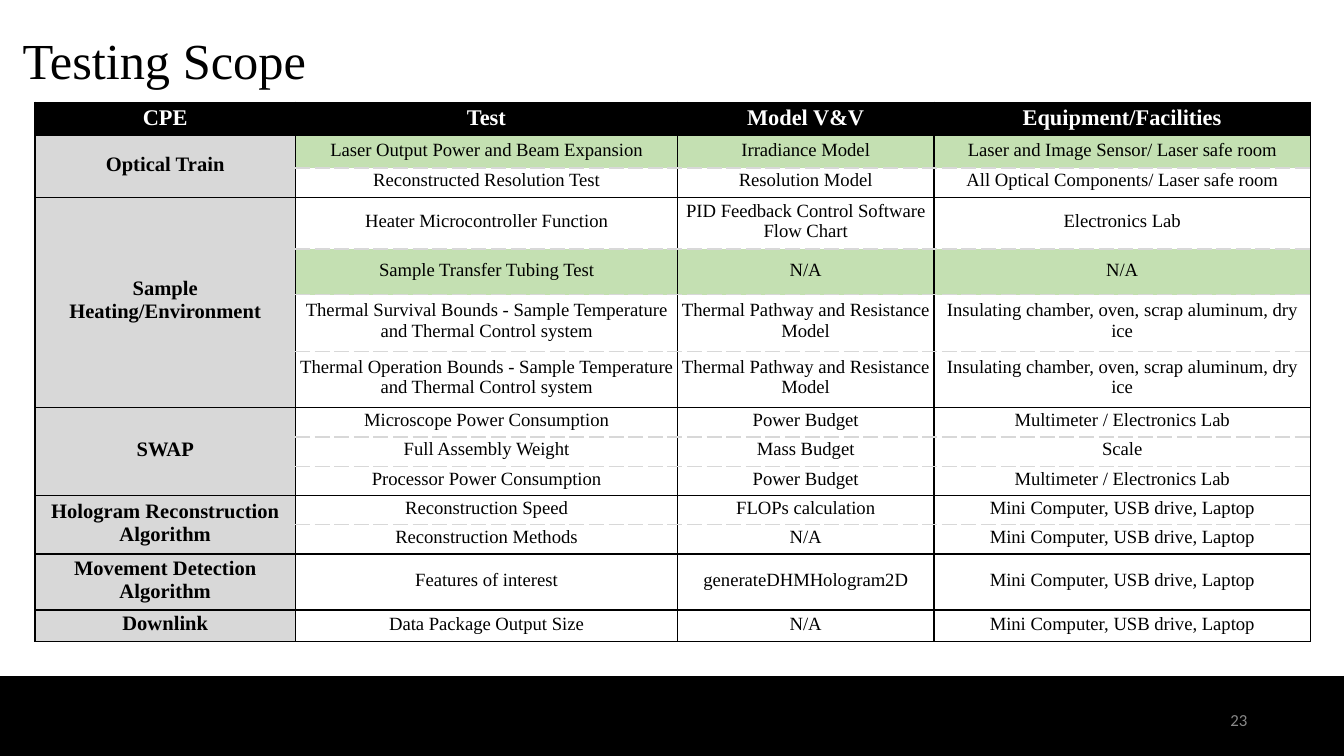
"""Build the Testing Scope slide with its table of tests by project element."""
import pptx
import pptx.dml.color
import pptx.enum.shapes
import pptx.enum.text
import pptx.oxml
import pptx.oxml.ns
import pptx.util

Inches, Pt = pptx.util.Inches, pptx.util.Pt
Align, Anchor = pptx.enum.text.PP_ALIGN, pptx.enum.text.MSO_ANCHOR

THEME = {
    "serif": "Times New Roman", "sans": "Calibri",
    "black": "000000", "white": "FFFFFF", "grey": "888888",
    "group": "D8D8D8", "done": "C4E0B2", "dash": "D8D8D8",
    "title": 27, "head": 12, "label": 11, "body": 10, "page": 9, "rule": 0.75,
}

HEADS = ("CPE", "Test", "Model V&V", "Equipment/Facilities")
BOARD = "Mini Computer, USB drive, Laptop"
METER = "Multimeter / Electronics Lab"
OVEN = "Insulating chamber, oven, scrap aluminum, dry ice"
PATHWAY = "Thermal Pathway and Resistance Model"
GROUPS = [
    ("Optical Train", [
        ("Laser Output Power and Beam Expansion", "Irradiance Model",
         "Laser and Image Sensor/ Laser safe room"),
        ("Reconstructed Resolution Test", "Resolution Model",
         "All Optical Components/ Laser safe room")]),
    ("Sample Heating/Environment", [
        ("Heater Microcontroller Function",
         "PID Feedback Control Software Flow Chart", "Electronics Lab"),
        ("Sample Transfer Tubing Test", "N/A", "N/A"),
        ("Thermal Survival Bounds - Sample Temperature and Thermal Control system",
         PATHWAY, OVEN),
        ("Thermal Operation Bounds - Sample Temperature and Thermal Control system",
         PATHWAY, OVEN)]),
    ("SWAP", [
        ("Microscope Power Consumption", "Power Budget", METER),
        ("Full Assembly Weight", "Mass Budget", "Scale"),
        ("Processor Power Consumption", "Power Budget", METER)]),
    ("Hologram Reconstruction Algorithm", [
        ("Reconstruction Speed", "FLOPs calculation", BOARD),
        ("Reconstruction Methods", "N/A", BOARD)]),
    ("Movement Detection Algorithm", [
        ("Features of interest", "generateDHMHologram2D", BOARD)]),
    ("Downlink", [("Data Package Output Size", "N/A", BOARD)]),
]
DONE = {"Laser Output Power and Beam Expansion", "Sample Transfer Tubing Test"}
WIDTHS = (1.94, 2.84, 1.91, 2.8)
HEIGHTS = (0.24, 0.24, 0.22, 0.34, 0.34, 0.42, 0.42,
           0.22, 0.2, 0.22, 0.19, 0.21, 0.37, 0.22)


def color(name):
    return pptx.dml.color.RGBColor.from_string(THEME[name])


def write(frame, text, size, ink, face="serif", align=Align.LEFT, bold=False):
    frame.text = text
    para = frame.paragraphs[0]
    para.alignment = align
    font = para.runs[0].font
    font.name, font.size, font.bold = THEME[face], Pt(THEME[size]), bold
    font.color.rgb = color(ink)
    return para


def add_text(slide, box, text, size, ink, **style):
    frame = slide.shapes.add_textbox(*map(Inches, box)).text_frame
    frame.word_wrap = True
    frame.margin_left = frame.margin_right = Inches(0.1)
    frame.margin_top = frame.margin_bottom = Inches(0.1)
    return frame, write(frame, text, size, ink, **style)


def edge(cell, side, dashed):
    tone = THEME["dash" if dashed else "black"]
    kind = "dash" if dashed else "solid"
    cell._tc.get_or_add_tcPr().append(pptx.oxml.parse_xml(
        f'<a:ln{side} {pptx.oxml.ns.nsdecls("a")} w="{Pt(THEME["rule"])}"><a:solidFill>'
        f'<a:srgbClr val="{tone}"/></a:solidFill><a:prstDash val="{kind}"/></a:ln{side}>'))


def dress(cell, fill, dashes="", anchor=Anchor.MIDDLE):
    cell.margin_left = cell.margin_right = cell.margin_top = Inches(0.01)
    cell.margin_bottom = Inches(0.04)
    cell.vertical_anchor = anchor
    for side in "LRTB":
        edge(cell, side, side in dashes)
    cell.fill.solid()
    cell.fill.fore_color.rgb = color(fill)


def add_grid(slide):
    size = map(Inches, (0.26, 0.76, sum(WIDTHS), sum(HEIGHTS)))
    grid = slide.shapes.add_table(len(HEIGHTS), len(WIDTHS), *size).table
    grid.horz_banding = False
    for part, width in zip(grid.columns, WIDTHS):
        part.width = Inches(width)
    for part, height in zip(grid.rows, HEIGHTS):
        part.height = Inches(height)

    for col, head in enumerate(HEADS):
        cell = grid.cell(0, col)
        dress(cell, "black", anchor=Anchor.BOTTOM)
        write(cell.text_frame, head, "head", "white", align=Align.CENTER, bold=True)

    top = 1
    for label, tests in GROUPS:
        last = len(tests) - 1
        for step, test in enumerate(tests):
            row = top + step
            dress(grid.cell(row, 0), "group")
            fill = "done" if test[0] in DONE else "white"
            dashes = ("T" if step else "") + ("B" if step < last else "")
            for col, text in enumerate(test, 1):
                cell = grid.cell(row, col)
                dress(cell, fill, dashes)
                write(cell.text_frame, text, "body", "black", align=Align.CENTER)
        cell = grid.cell(top, 0)
        if last:
            cell.merge(grid.cell(top + last, 0))
        write(cell.text_frame, label, "label", "black", align=Align.CENTER, bold=True)
        top += len(tests)


def main():
    deck = pptx.Presentation()
    deck.slide_width = Inches(10)
    deck.slide_height = deck.slide_width * 9 // 16
    slide = deck.slides.add_slide(deck.slide_layouts[6])

    band = slide.shapes.add_shape(pptx.enum.shapes.MSO_SHAPE.RECTANGLE,
                                  *map(Inches, (0, 5.04, 10, 0.58)))
    band.shadow.inherit = False
    band.fill.solid()
    band.fill.fore_color.rgb = band.line.color.rgb = color("black")
    band.line.width = Pt(1)

    title = add_text(slide, (0.07, 0.17, 9.32, 0.63), "Testing Scope", "title", "black")[1]
    title.line_spacing = 0.9
    page = add_text(slide, (8.78, 5.14, 0.6, 0.43), "23", "page", "grey",
                    face="sans", align=Align.RIGHT)[0]
    page.vertical_anchor = Anchor.MIDDLE
    add_grid(slide)
    deck.save("out.pptx")


if __name__ == "__main__":
    main()
